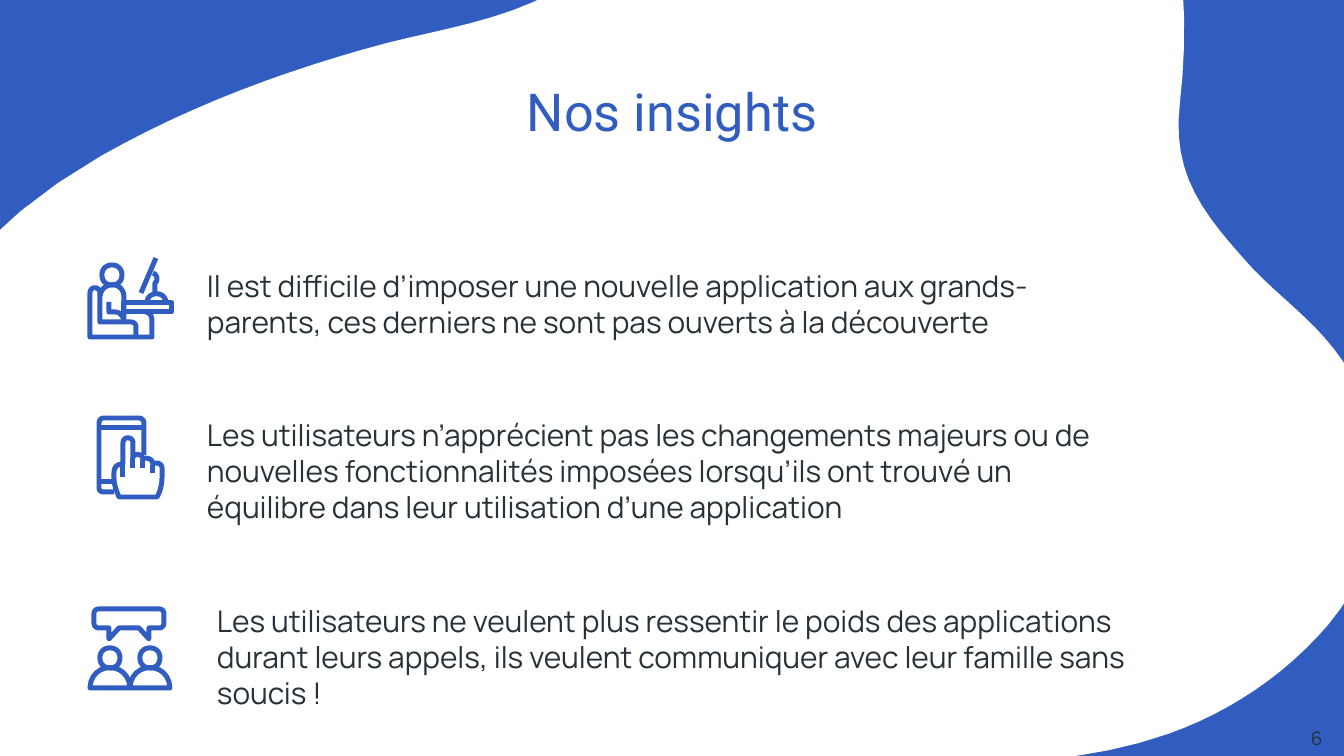
import dataclasses
import typing

import pptx
import pptx.dml.color
import pptx.enum.text
import pptx.util

PX = 9144000 / 1344
BLUE = pptx.dml.color.RGBColor(0x30, 0x5D, 0xBF)
WHITE = pptx.dml.color.RGBColor(0xFF, 0xFF, 0xFF)
DARK = pptx.dml.color.RGBColor(0x26, 0x32, 0x38)
CURVE_STEPS = 12

Segment = typing.Tuple[int, ...]


@dataclasses.dataclass(frozen=True)
class Contour:
    start: typing.Tuple[int, int]
    segments: typing.Tuple[Segment, ...]
    closed: bool = False


@dataclasses.dataclass(frozen=True)
class Insight:
    left: int
    top: int
    height: int
    text: str


def emu(px: float) -> int:
    return round(px * PX)


def circle(x: int, y: int, r: int) -> Contour:
    k = round(r * 0.55)
    return Contour((x + r, y), (
        (x + r, y + k, x + k, y + r, x, y + r),
        (x - k, y + r, x - r, y + k, x - r, y),
        (x - r, y - k, x - k, y - r, x, y - r),
        (x + k, y - r, x + r, y - k, x + r, y),
    ), True)


def bust(x: int) -> Contour:
    return Contour((x - 20, 688), ((x - 19, 661, x + 19, 661, x + 20, 688),), True)


def line(*points: typing.Tuple[int, int]) -> Contour:
    return Contour(points[0], points[1:])


def flatten(contour: Contour) -> typing.List[typing.Tuple[int, int]]:
    points = []
    x, y = contour.start
    for seg in contour.segments:
        if len(seg) == 2:
            points.append(seg)
        else:
            x1, y1, x2, y2, x3, y3 = seg
            for i in range(1, CURVE_STEPS + 1):
                t = i / CURVE_STEPS
                u = 1 - t
                a, b, c, d = u ** 3, 3 * u * u * t, 3 * u * t * t, t ** 3
                points.append((a * x + b * x1 + c * x2 + d * x3,
                               a * y + b * y1 + c * y2 + d * y3))
        x, y = seg[-2:]
    return [(emu(px), emu(py)) for px, py in points]


def add_outline(s, contours: typing.Sequence[Contour]):
    builder = None
    for contour in contours:
        x, y = map(emu, contour.start)
        if builder is None:
            builder = s.shapes.build_freeform(x, y, scale=1.0)
        else:
            builder.move_to(x, y)
        builder.add_line_segments(flatten(contour), close=contour.closed)
    sp = builder.convert_to_shape()
    sp.shadow.inherit = False
    return sp


def add_icon(s, contours: typing.Sequence[Contour]) -> None:
    sp = add_outline(s, contours)
    sp.fill.background()
    sp.line.color.rgb = BLUE
    sp.line.width = emu(5)


def set_text(sp, text: str, font: str, size: int, color) -> None:
    tf = sp.text_frame
    tf.text = text
    tf.word_wrap = True
    tf.auto_size = pptx.enum.text.MSO_AUTO_SIZE.NONE
    tf.vertical_anchor = pptx.enum.text.MSO_ANCHOR.TOP
    tf.margin_left = tf.margin_right = tf.margin_top = tf.margin_bottom = emu(13)
    r = tf.paragraphs[0].runs[0]
    r.font.name = font
    r.font.size = pptx.util.Pt(size)
    r.font.color.rgb = color


def add_text(s, left: int, top: int, width: int, height: int, text: str,
             size: int, margin: int, indent: int = 0) -> None:
    sp = s.shapes.add_textbox(*map(emu, (left, top, width, height)))
    set_text(sp, text, "Manrope", size, DARK)
    p_pr = sp.text_frame.paragraphs[0]._p.get_or_add_pPr()
    p_pr.set("marL", str(emu(margin)))
    p_pr.set("indent", str(emu(indent)))


BLOB = Contour((1044, -251), (
    (1003, -269, 948, -276, 876, -263), (763, -245, 679, -153, 617, -65),
    (566, 12, 466, 23, 387, 43), (289, 69, 191, 105, 101, 156),
    (-82, 261, -132, 401, -116, 578), (-112, 630, -101, 715, -5, 809),
    (31, 845, 71, 871, 114, 890), (224, 935, 359, 926, 511, 876),
    (558, 860, 603, 836, 650, 817), (699, 798, 751, 785, 802, 777),
    (925, 759, 1052, 775, 1168, 734), (1230, 712, 1285, 675, 1328, 625),
    (1380, 563, 1398, 481, 1367, 406), (1337, 335, 1296, 313, 1254, 270),
    (1204, 215, 1171, 176, 1180, 102), (1191, 9, 1191, -191, 1044, -251),
), True)

SEATED_PERSON = (
    circle(112, 275, 10),
    Contour((90, 337), ((90, 293), (90, 286, 100, 286, 100, 293), (100, 322), (131, 322),
                        (134, 322, 136, 324, 136, 327), (136, 337)), True),
    Contour((100, 296), ((102, 281, 123, 281, 124, 296), (124, 320))),
    Contour((109, 302), ((109, 312), (115, 312), (120, 312, 123, 316, 124, 321))),
    Contour((124, 303), ((172, 303), (172, 312), (124, 312)), True),
    Contour((146, 312), ((150, 313, 152, 316, 152, 321), (152, 337), (136, 337))),
    Contour((147, 302), ((148, 291, 165, 291, 166, 302),)),
    Contour((155, 293), ((155, 283), (158, 281, 158, 275, 153, 273))),
    line((156, 258), (141, 293)),
)

PHONE_TOUCH = (
    Contour((114, 492), ((104, 492), (100, 492, 99, 490, 99, 487), (99, 424),
                         (99, 420, 101, 418, 104, 418), (138, 418),
                         (142, 418, 144, 420, 144, 424), (144, 455))),
    line((99, 428), (144, 428)),
    line((99, 482), (113, 482)),
    Contour((119, 497), ((116, 490, 114, 484, 114, 478), (114, 473),
                         (114, 467, 117, 464, 123, 464), (123, 443),
                         (123, 436, 133, 436, 133, 443), (133, 458),
                         (133, 453, 143, 453, 143, 460),
                         (143, 457, 153, 457, 153, 465),
                         (153, 462, 162, 462, 162, 468), (162, 477),
                         (162, 485, 160, 492, 157, 497)), True),
    line((123, 464), (123, 477)),
    line((133, 458), (133, 468)),
    line((143, 460), (143, 468)),
    line((153, 465), (153, 473)),
)

PEOPLE = tuple(f for x in (110, 150) for f in (circle(x, 658, 10), bust(x)))

SPEECH_BUBBLE = (
    Contour((99, 609), ((159, 609), (162, 609, 164, 611, 164, 614), (164, 623),
                        (164, 626, 162, 628, 159, 628), (149, 628), (149, 639), (139, 628),
                        (119, 628), (109, 639), (109, 628), (99, 628),
                        (96, 628, 94, 626, 94, 623), (94, 614),
                        (94, 611, 96, 609, 99, 609)), True),
)

INSIGHTS = (
    Insight(175, 255, 85, "Il est difficile d’imposer une nouvelle application aux "
            "grands-parents, ces derniers ne sont pas ouverts à la découverte"),
    Insight(175, 404, 133, "Les utilisateurs n’apprécient pas les changements majeurs ou de "
            "nouvelles fonctionnalités imposées lorsqu’ils ont trouvé un équilibre dans leur "
            "utilisation d’une application"),
    Insight(185, 590, 133, "Les utilisateurs ne veulent plus ressentir le poids des applications "
            "durant leurs appels, ils veulent communiquer avec leur famille sans soucis !"),
)


def main() -> None:
    prs = pptx.Presentation()
    prs.slide_width, prs.slide_height = emu(1344), emu(756)
    s = prs.slides.add_slide(prs.slide_layouts[5])
    s.background.fill.solid()
    s.background.fill.fore_color.rgb = BLUE

    blob = add_outline(s, [BLOB])
    blob.fill.solid()
    blob.fill.fore_color.rgb = WHITE
    blob.line.fill.background()
    s.shapes._spTree.insert(2, blob._element)

    title = s.shapes.title
    title.left, title.top, title.width, title.height = map(emu, (46, 66, 1252, 85))
    set_text(title, "Nos insights", "Roboto", 28, BLUE)
    title.text_frame.paragraphs[0].alignment = pptx.enum.text.PP_ALIGN.CENTER

    for icon in (SEATED_PERSON, PHONE_TOUCH, PEOPLE, SPEECH_BUBBLE):
        add_icon(s, icon)
    for item in INSIGHTS:
        add_text(s, item.left, item.top, 974, item.height, item.text, 16, 19)
    add_text(s, 1282, 714, 62, 42, "6", 10, 67, -51)
    prs.save("out.pptx")


if __name__ == "__main__":
    main()
